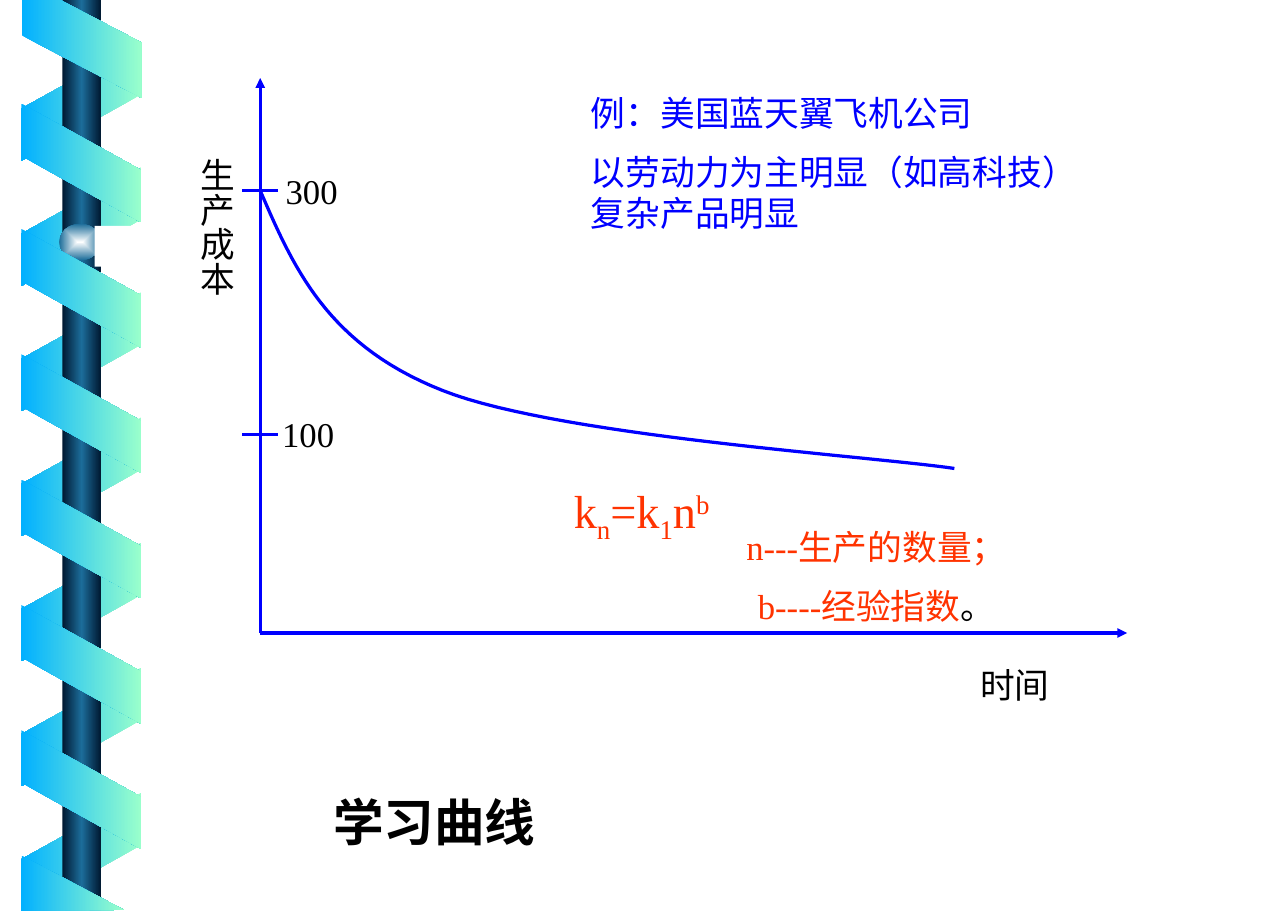
from pptx import Presentation
from pptx.dml.color import RGBColor
from pptx.enum.shapes import MSO_CONNECTOR as CONNECTOR, MSO_SHAPE as SHAPE
from pptx.enum.text import MSO_ANCHOR as ANCHOR, PP_ALIGN as ALIGN
from pptx.oxml import parse_xml
from pptx.oxml.ns import nsdecls, qn
from pptx.util import Inches, Pt

THEME = {
    "latin": "Times New Roman", "heading": "Noto Sans CJK JP",
    "black": "000000", "blue": "0000FF", "red": "FF3300", "white": "FFFFFF",
    "title": 35, "formula": 32, "text": 24, "line": 2.25, "gap": 12,
    "ribbon": [(0, "01B0FF"), (100, "99FFCC")],
    "ribbon_back": [(0, "99FFCC"), (100, "01B0FF")],
    "rod": [(0, "001932"), (50, "1C6D9A"), (100, "001932")],
    "bead": [(0, "FEFFFF"), (100, "1C6D9A")],
}

TITLE = "学习曲线"
LABELS = [
    {"box": (8.75, 6.33, 2, 0.5), "lines": [[("时间", "black", 0)]]},
    {"box": (1.73, 1.42, 0.6, 2), "lines": [[("生产成本", "black", 0)]], "vertical": True},
    {"box": (2.33, 1.58, 1.33, 0.5), "lines": [[("300", "black", 0)]]},
    {"box": (2.5, 3.92, 0.92, 0.5), "lines": [[("100", "black", 0)]]},
    {"box": (5.58, 0.83, 5.08, 1.5), "align": ALIGN.LEFT, "lines": [
        [("例：美国蓝天翼飞机公司", "blue", 0)],
        [("以劳动力为主明显（如高科技）复杂产品明显", "blue", 0)]]},
    {"box": (4.33, 4.58, 3.67, 0.63), "size": "formula", "lines": [
        [("k", "red", 0), ("n", "red", -25), ("=k", "red", 0),
         ("1", "red", -25), ("n", "red", 0), ("b", "red", 30)]]},
    {"box": (6.67, 5, 3.5, 1.1), "lines": [
        [("n---生产的数量；", "red", 0)],
        [("b----经验指数", "red", 0), ("。", "black", 0)]]},
]
SLIDE_WIDTH, SLIDE_HEIGHT = 99 / 8, 8.75
ORIGIN, TIME_END, COST_END = (2.5, 6.08), (10.83, 6.08), (2.5, 0.75)
TICK_HEIGHTS = [1.83, 4.17]
TICK_HALF = 0.17
CURVE = [
    [(2.5, 1.83), (2.82, 2.57), (3.14, 3.31), (4.25, 3.75)],
    [(4.25, 3.75), (5.36, 4.19), (8.36, 4.38), (9.17, 4.5)],
]
CURVE_STEPS = 30
RIBBON_LEFT, RIBBON_SIZE, RIBBON_SLANT = 0.21, (1.14, 1.15), 0.56
BACK_RIBBONS, FRONT_RIBBONS = (0.4, 7.61, 7), (0.99, 7.01, 6)
RIBBON_ENDS = [
    [(0.21, 0), (0.21, 0.34), (1.36, 0.94), (1.36, 0.41), (0.58, 0)],
    [(1.19, 8.74), (0.21, 8.22), (0.2, 8.75)],
]


def assign(target, values):
    for name, value in values.items():
        setattr(target, name, value)


def color(name):
    return RGBColor.from_string(THEME[name])


def inches(values):
    return [Inches(value) for value in values]


def fill_gradient(shape, stops, angle=0, radial=False):
    marks = "".join(f'<a:gs pos="{position * 1000}"><a:srgbClr val="{code}"/></a:gs>'
                    for position, code in stops)
    direction = f'<a:lin ang="{angle * 60000}" scaled="0"/>'
    if radial:
        direction = ('<a:path path="shape"><a:fillToRect l="50000" t="50000" '
                     'r="50000" b="50000"/></a:path>')
    geometry = shape._element.spPr.find(qn("a:custGeom"))
    if geometry is None:
        geometry = shape._element.spPr.find(qn("a:prstGeom"))
    geometry.addnext(parse_xml(f'<a:gradFill {nsdecls("a")} rotWithShape="0">'
                               f'<a:gsLst>{marks}</a:gsLst>{direction}</a:gradFill>'))
    shape.line.fill.background()


def add_preset(slide, kind, box, adjustment=None):
    shape = slide.shapes.add_shape(kind, *inches(box))
    shape.shadow.inherit = False
    shape.line.fill.background()
    if adjustment is not None:
        shape.adjustments[0] = adjustment
    return shape


def flip(shape):
    shape._element.spPr.find(qn("a:xfrm")).set("flipH", "1")


def add_ribbons(slide, first, last, count, rotation, stops, flipped):
    pitch = (last - first) / (count - 1)
    for index in range(count):
        box = (RIBBON_LEFT, first + index * pitch, *RIBBON_SIZE)
        ribbon = add_preset(slide, SHAPE.PARALLELOGRAM, box, RIBBON_SLANT)
        ribbon.rotation = rotation
        if flipped:
            flip(ribbon)
        fill_gradient(ribbon, stops)


def add_outline(slide, points, close):
    start, *rest = [tuple(inches(point)) for point in points]
    builder = slide.shapes.build_freeform(*start)
    builder.add_line_segments(rest, close=close)
    shape = builder.convert_to_shape()
    shape.shadow.inherit = False
    return shape


def add_spiral(slide):
    add_ribbons(slide, *BACK_RIBBONS, 90, THEME["ribbon_back"], True)
    fill_gradient(add_preset(slide, SHAPE.RECTANGLE, (0.6, 0, 0.37, 8.75)), THEME["rod"])
    crossbar = add_preset(slide, SHAPE.PENTAGON, (0.74, 2.17, 11.63, 0.32), 0.62)
    flip(crossbar)
    fill_gradient(crossbar, THEME["rod"], angle=90)
    bead = add_preset(slide, SHAPE.OVAL, (0.57, 2.15, 0.4, 0.35))
    fill_gradient(bead, THEME["bead"], radial=True)
    add_ribbons(slide, *FRONT_RIBBONS, 270, THEME["ribbon"], False)
    for points in RIBBON_ENDS:
        fill_gradient(add_outline(slide, points, True), THEME["ribbon"])
    cover = add_preset(slide, SHAPE.RECTANGLE, (0.91, 2.17, 11.58, 0.39))
    cover.fill.solid()
    cover.fill.fore_color.rgb = color("white")


def style_line(line):
    line.color.rgb = color("blue")
    line.width = Pt(THEME["line"])


def add_line(slide, start, end, arrow=False):
    connector = slide.shapes.add_connector(CONNECTOR.STRAIGHT, *inches(start + end))
    style_line(connector.line)
    if arrow:
        connector.line._get_or_add_ln().append(
            parse_xml(f'<a:tailEnd {nsdecls("a")} type="triangle"/>'))
    connector._element.spPr.append(parse_xml(f'<a:effectLst {nsdecls("a")}/>'))


def bezier(points, t):
    weights = ((1 - t) ** 3, 3 * t * (1 - t) ** 2, 3 * t ** 2 * (1 - t), t ** 3)
    return tuple(sum(weight * value for weight, value in zip(weights, axis))
                 for axis in zip(*points))


def add_axes_and_curve(slide):
    add_line(slide, ORIGIN, TIME_END, arrow=True)
    add_line(slide, ORIGIN, COST_END, arrow=True)
    for height in TICK_HEIGHTS:
        add_line(slide, (ORIGIN[0] - TICK_HALF, height), (ORIGIN[0] + TICK_HALF, height))
    points = [CURVE[0][0]] + [bezier(part, step / CURVE_STEPS)
                              for part in CURVE for step in range(1, CURVE_STEPS + 1)]
    curve = add_outline(slide, points, False)
    curve.fill.background()
    style_line(curve.line)


def add_label(slide, box, lines, align=ALIGN.CENTER, size="text", vertical=False):
    frame = slide.shapes.add_textbox(*inches(box)).text_frame
    frame.word_wrap = True
    if vertical:
        frame._txBody.bodyPr.set("vert", "eaVert")
    for index, runs in enumerate(lines):
        paragraph = frame.add_paragraph() if index else frame.paragraphs[0]
        paragraph.alignment = align
        if index:
            paragraph.space_before = Pt(THEME["gap"])
        for text, color_name, baseline in runs:
            run = paragraph.add_run()
            run.text = text
            assign(run.font, {"name": THEME["latin"], "size": Pt(THEME[size])})
            run.font.color.rgb = color(color_name)
            if baseline:
                run._r.get_or_add_rPr().set("baseline", str(baseline * 1000))


def add_title(slide):
    title = slide.shapes.title
    assign(title, dict(zip(("left", "top", "width", "height"), inches((3.08, 7.58, 6.75, 0.66)))))
    frame = title.text_frame
    assign(frame, {"text": TITLE, "vertical_anchor": ANCHOR.BOTTOM, "word_wrap": True,
                   "margin_left": Inches(0.12), "margin_right": Inches(0.12),
                   "margin_top": Inches(0.06), "margin_bottom": Inches(0.06)})
    paragraph = frame.paragraphs[0]
    paragraph.alignment = ALIGN.LEFT
    font = paragraph.runs[0].font
    assign(font, {"name": THEME["heading"], "size": Pt(THEME["title"]), "bold": True})
    font.color.rgb = color("black")


def main():
    presentation = Presentation()
    presentation.slide_width = Inches(SLIDE_WIDTH)
    presentation.slide_height = Inches(SLIDE_HEIGHT)
    slide = presentation.slides.add_slide(presentation.slide_layouts[5])
    add_spiral(slide)
    add_title(slide)
    add_axes_and_curve(slide)
    for label in LABELS:
        add_label(slide, **label)
    presentation.save("out.pptx")


if __name__ == "__main__":
    main()
